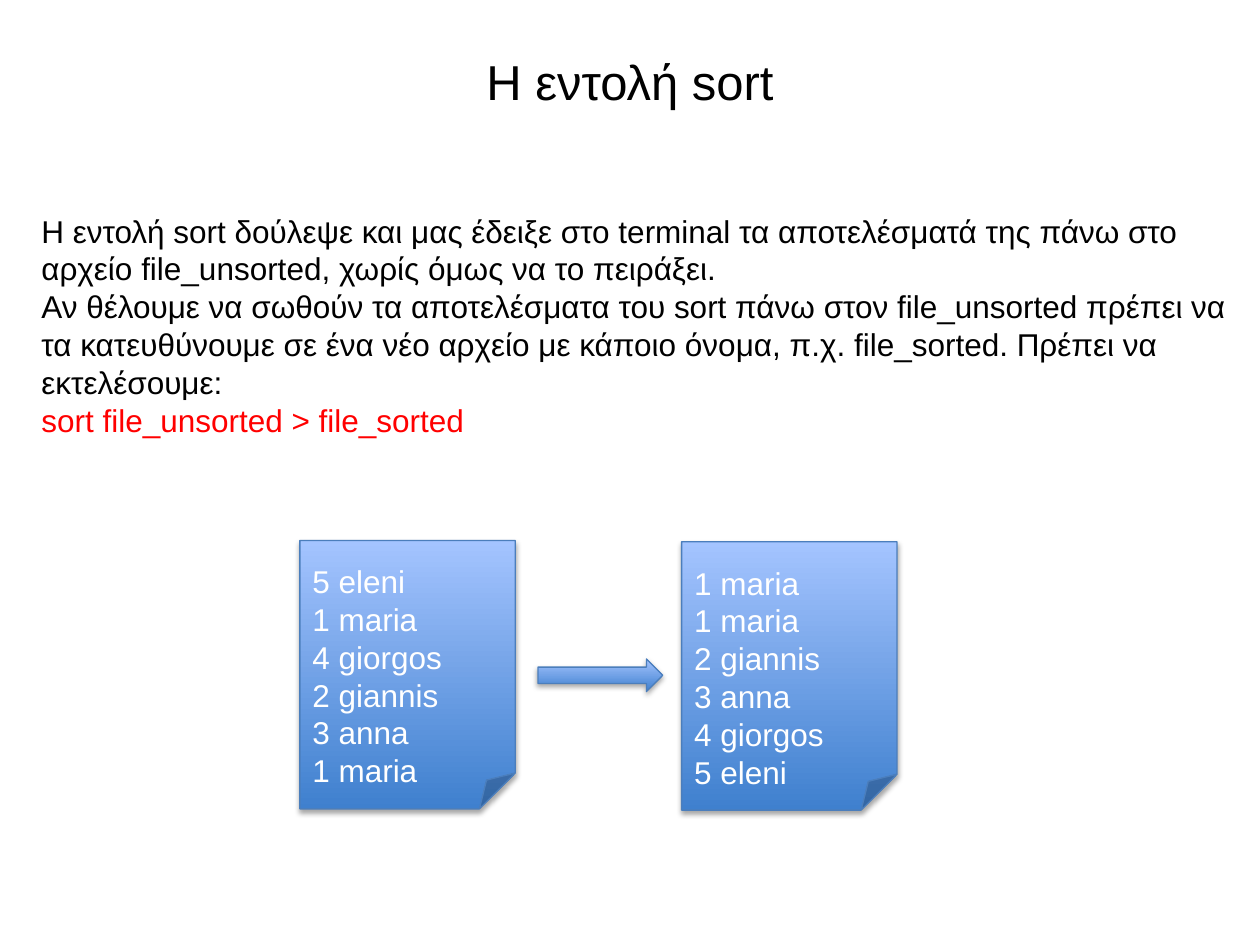
from lxml import etree
from pptx import Presentation
from pptx.dml.color import RGBColor
from pptx.enum.shapes import MSO_SHAPE
from pptx.enum.text import MSO_ANCHOR, PP_ALIGN
from pptx.oxml import parse_xml
from pptx.oxml.ns import nsdecls
from pptx.util import Inches, Pt

CARD, ARROW = MSO_SHAPE.FOLDED_CORNER, MSO_SHAPE.RIGHT_ARROW
MIDDLE, TOP = MSO_ANCHOR.MIDDLE, MSO_ANCHOR.TOP
CENTER, LEFT, JUSTIFY = PP_ALIGN.CENTER, PP_ALIGN.LEFT, PP_ALIGN.JUSTIFY
FONT = "Arial"
BLACK, WHITE, RED = "000000", "FFFFFF", "FF0000"
DARK_BLUE, LIGHT_BLUE, OUTLINE = "3F80CE", "A4C4FF", "4B7EBC"
SHADOW = (
    f'<a:effectLst {nsdecls("a")}><a:outerShdw blurRad="{Pt(3.1)}" dist="{Pt(1.8)}" '
    'dir="5400000" rotWithShape="0"><a:srgbClr val="000000"><a:alpha val="35000"/>'
    '</a:srgbClr></a:outerShdw></a:effectLst>'
)

prs = Presentation()
prs.slide_width, prs.slide_height = Inches(10), Inches(7.5)
# Grid of 100 columns by 75 rows
COL, ROW = prs.slide_width / 100, prs.slide_height / 75
slide = prs.slides.add_slide(prs.slide_layouts[5])


def color(hex_value):
    return RGBColor.from_string(hex_value)


def write(frame, lines, size, align, anchor):
    frame.word_wrap = True
    frame.vertical_anchor = anchor
    for index, (text, text_color) in enumerate(lines):
        paragraph = frame.paragraphs[0] if index == 0 else frame.add_paragraph()
        paragraph.alignment = align
        run = paragraph.add_run()
        run.text = text
        run.font.name, run.font.size = FONT, Pt(size)
        run.font.color.rgb = color(text_color)


# Title
title = slide.shapes.title
title.left, title.top = int(5 * COL), int(3 * ROW)
title.width, title.height = int(90 * COL), int(6.8 * ROW)
write(title.text_frame, [("Η εντολή sort", BLACK)], 28, CENTER, MIDDLE)

# Explanation and command
explanation = slide.shapes.add_textbox(
    int(2.3 * COL), int(16.3 * ROW), int(96.1 * COL), int(22.2 * ROW))
write(explanation.text_frame, [
    ("Η εντολή sort δούλεψε και μας έδειξε στο terminal τα αποτελέσματά της πάνω στο "
     "αρχείο file_unsorted, χωρίς όμως να το πειράξει.", BLACK),
    ("Αν θέλουμε να σωθούν τα αποτελέσματα του sort πάνω στον file_unsorted πρέπει να "
     "τα κατευθύνουμε σε ένα νέο αρχείο με κάποιο όνομα, π.χ. file_sorted. Πρέπει να "
     "εκτελέσουμε:", BLACK),
    ("sort file_unsorted > file_sorted", RED),
], 18, LEFT, TOP)

# Unsorted file, arrow, sorted file
unsorted_names = ["5 eleni", "1 maria", "4 giorgos", "2 giannis", "3 anna", "1 maria"]
for kind, left, top, width, height, names in [
    (CARD, 23.8, 42.9, 17.1, 21.3, unsorted_names),
    (ARROW, 42.7, 52.3, 9.9, 2.6, []),
    (CARD, 54.1, 43, 17.1, 21.3, sorted(unsorted_names)),
]:
    step = slide.shapes.add_shape(
        kind, int(left * COL), int(top * ROW), int(width * COL), int(height * ROW))
    step.fill.gradient()
    step.fill.gradient_angle = 90
    for stop, stop_color in zip(step.fill.gradient_stops, (DARK_BLUE, LIGHT_BLUE)):
        stop.color.rgb = color(stop_color)
    step.line.color.rgb = color(OUTLINE)
    step.line.width = Pt(0.75)
    step.element.spPr.append(parse_xml(SHADOW))
    if names:
        step.text_frame.margin_top = int(3.5 * ROW)
        write(step.text_frame, [(name, WHITE) for name in names], 18, JUSTIFY, MIDDLE)

prs.save("out.pptx")
